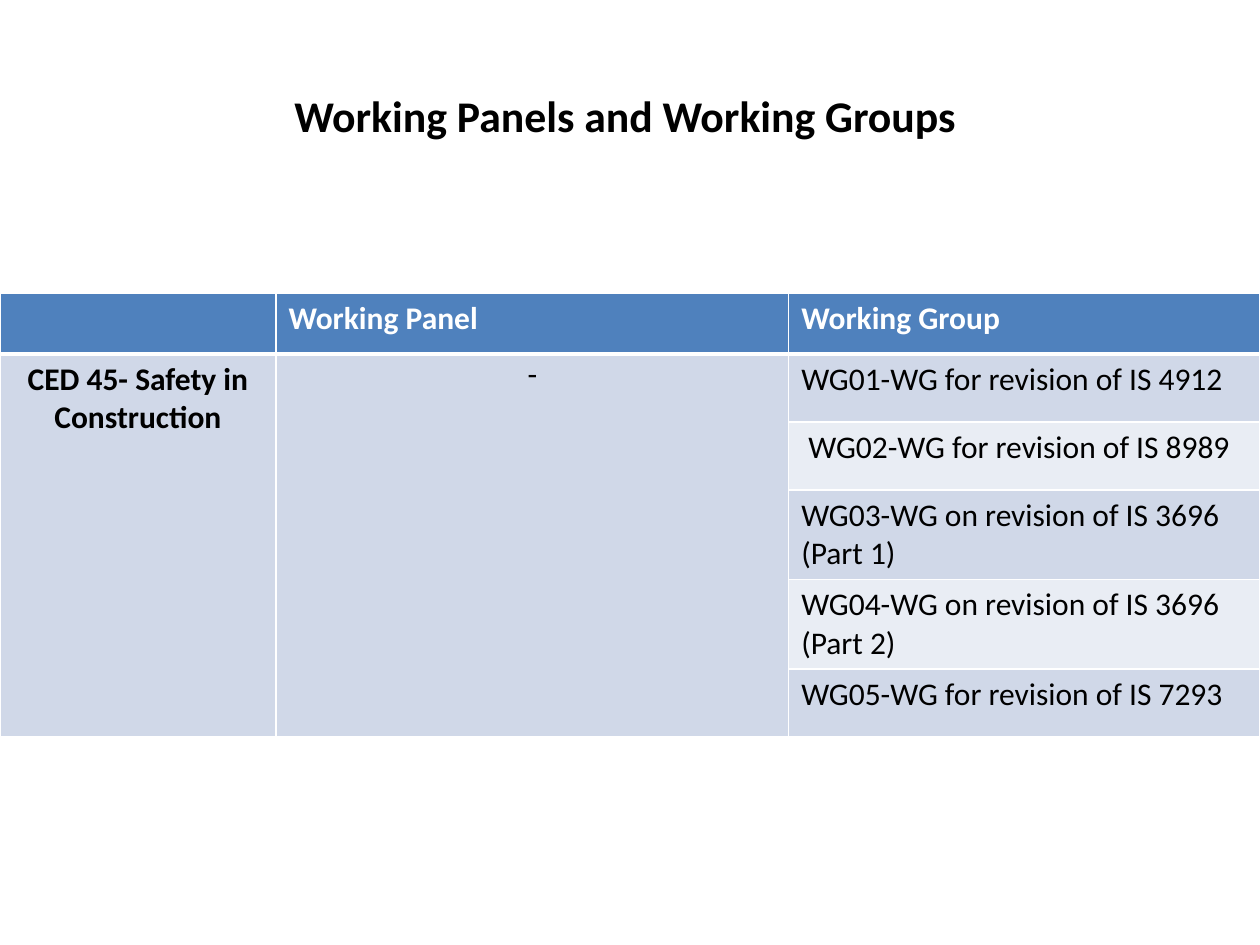
from dataclasses import dataclass

import pptx
import pptx.dml.color
import pptx.enum.text
import pptx.oxml
import pptx.oxml.ns
import pptx.util
from pptx.dml.color import RGBColor

BLACK = RGBColor(0x00, 0x00, 0x00)
WHITE = RGBColor(0xFF, 0xFF, 0xFF)
HEADER_BLUE = RGBColor(0x4F, 0x81, 0xBD)
BAND_DARK = RGBColor(0xD0, 0xD8, 0xE8)
BAND_LIGHT = RGBColor(0xE9, 0xED, 0xF4)

FONT = "Calibri"
SLIDE_W = pptx.util.Inches(10)
SLIDE_H = pptx.util.Inches(7.5)
COLUMN_SHARES = (0.219, 0.407, 0.374)
HEADER_HEIGHT = 0.48
ROW_HEIGHT = 0.54

HEADERS = ("", "Working Panel", "Working Group")
COMMITTEE = "CED 45- Safety in Construction"
WORKING_GROUPS = (
    "WG01-WG for revision of IS 4912",
    " WG02-WG for revision of IS 8989",
    "WG03-WG on revision of IS 3696 (Part 1)",
    "WG04-WG on revision of IS 3696 (Part 2)",
    "WG05-WG for revision of IS 7293",
)


@dataclass(frozen=True)
class CellStyle:
    fill: RGBColor
    color: RGBColor = BLACK
    bold: bool = False
    centred: bool = False
    bottom_pt: float = 1


def format_paragraph(p, size: float, color: RGBColor, bold: bool, centred: bool) -> None:
    align = pptx.enum.text.PP_ALIGN
    p.alignment = align.CENTER if centred else align.LEFT
    for r in p.runs:
        r.font.name = FONT
        r.font.size = pptx.util.Pt(size)
        r.font.bold = bold
        r.font.color.rgb = color


def set_borders(cell, bottom_pt: float) -> None:
    """Draw white cell borders; they must precede the fill in the XML."""
    widths = {"lnL": 1, "lnR": 1, "lnT": 1, "lnB": bottom_pt}
    for position, (side, width) in enumerate(widths.items()):
        line = pptx.oxml.parse_xml(
            f'<a:{side} {pptx.oxml.ns.nsdecls("a")} w="{pptx.util.Pt(width)}">'
            f'<a:solidFill><a:srgbClr val="{WHITE}"/></a:solidFill></a:{side}>'
        )
        cell._tc.get_or_add_tcPr().insert(position, line)


def style_cell(cell, text: str, style: CellStyle) -> None:
    cell.text_frame.text = text
    format_paragraph(cell.text_frame.paragraphs[0], 18, style.color, style.bold, style.centred)
    cell.fill.solid()
    cell.fill.fore_color.rgb = style.fill
    set_borders(cell, style.bottom_pt)


def add_title(s, text: str) -> None:
    title = s.shapes.title
    title.left, title.top = int(SLIDE_W * 0.05), pptx.util.Inches(0.52)
    title.width, title.height = int(SLIDE_W * 0.9), pptx.util.Inches(0.79)
    tf = title.text_frame
    tf.text = text
    tf.vertical_anchor = pptx.enum.text.MSO_ANCHOR.MIDDLE
    format_paragraph(tf.paragraphs[0], 25, BLACK, bold=True, centred=True)


def add_groups_table(s) -> None:
    heights = [HEADER_HEIGHT] + [ROW_HEIGHT] * len(WORKING_GROUPS)
    table = s.shapes.add_table(
        len(heights), len(HEADERS), 0, pptx.util.Inches(2.33),
        SLIDE_W, pptx.util.Inches(sum(heights)),
    ).table
    for column, share in zip(table.columns, COLUMN_SHARES):
        column.width = int(SLIDE_W * share)
    for row, height in zip(table.rows, heights):
        row.height = pptx.util.Inches(height)

    header = CellStyle(HEADER_BLUE, WHITE, bold=True, bottom_pt=3)
    for col, text in enumerate(HEADERS):
        style_cell(table.cell(0, col), text, header)

    for row, group in enumerate(WORKING_GROUPS, start=1):
        first = row == 1
        style_cell(table.cell(row, 0), COMMITTEE if first else "",
                   CellStyle(BAND_DARK, bold=True, centred=True))
        style_cell(table.cell(row, 1), "-" if first else "",
                   CellStyle(BAND_DARK, centred=True))
        style_cell(table.cell(row, 2), group,
                   CellStyle(BAND_DARK if row % 2 else BAND_LIGHT))

    for col in (0, 1):
        table.cell(1, col).merge(table.cell(len(WORKING_GROUPS), col))
    panel = table.cell(1, 1)
    panel.margin_left = panel.margin_top = panel.margin_right = pptx.util.Inches(0.01)
    panel.margin_bottom = 0


def main() -> None:
    prs = pptx.Presentation()
    prs.slide_width, prs.slide_height = SLIDE_W, SLIDE_H
    s = prs.slides.add_slide(prs.slide_layouts.get_by_name("Title Only"))
    add_title(s, "Working Panels and Working Groups ")
    add_groups_table(s)
    prs.save("out.pptx")


if __name__ == "__main__":
    main()
